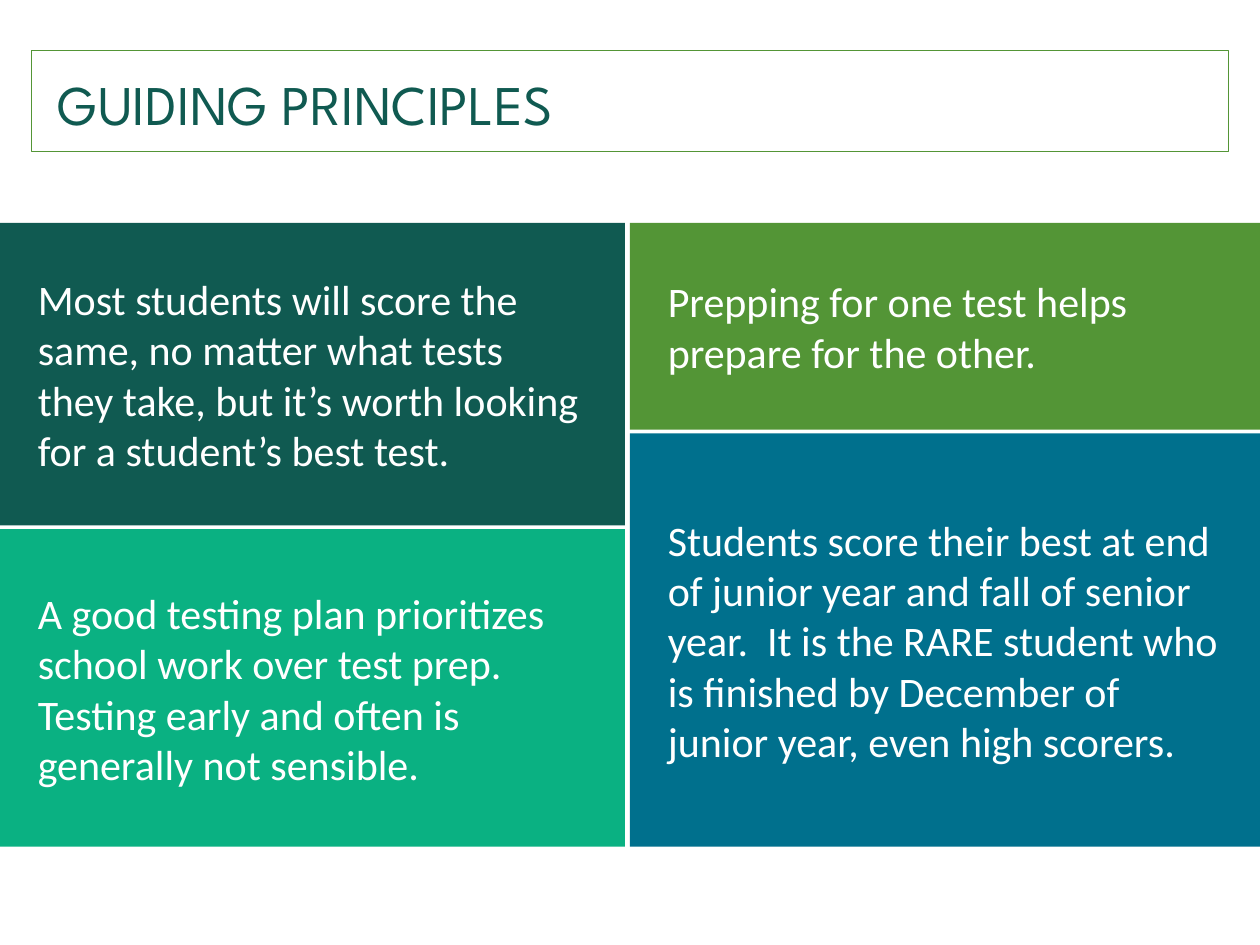
from dataclasses import dataclass

from pptx import Presentation
from pptx import util as u
from pptx.dml.color import RGBColor
from pptx.enum import shapes, text


@dataclass(frozen=True)
class Theme:
    """Colours, fonts and type sizes of the deck."""
    dark: str = "105A51"
    mint: str = "0AB182"
    leaf: str = "539536"
    blue: str = "00708D"
    white: str = "FFFFFF"
    title_font: str = "League Spartan"
    body_font: str = "Calibri"
    title_size: int = 32
    body_size: int = 24


T = Theme()
WIDTH, HEIGHT = 10, 7.5
COL_GAP, ROW_GAP = 0.04, 0.03
TITLE_BOX = (0.25, 0.4, WIDTH - 0.5, 0.8)
BODY_BOX = (0, 1.77, WIDTH, 4.95)

COLUMNS = [
    [
        (20, T.dark, "Most students will score the same, no matter what tests they take, "
                     "but it’s worth looking for a student’s best test."),
        (21, T.mint, "A good testing plan prioritizes school work over test prep.  "
                     "Testing early and often is generally not sensible."),
    ],
    [
        (1, T.leaf, "Prepping for one test helps prepare for the other."),
        (2, T.blue, "Students score their best at end of junior year and fall of senior year.  "
                    "It is the RARE student who is finished by December of junior year, "
                    "even high scorers."),
    ],
]


def inches(box):
    """Convert a box of numbers to lengths."""
    return [u.Inches(v) for v in box]


def write(tf, words, font, size, color, inset):
    """Fill a text frame with one left-aligned, vertically centred paragraph."""
    tf.word_wrap = True
    tf.auto_size = text.MSO_AUTO_SIZE.NONE
    tf.vertical_anchor = text.MSO_ANCHOR.MIDDLE
    tf.margin_left = tf.margin_right = u.Inches(inset)
    p = tf.paragraphs[0]
    p.text = words
    p.alignment = text.PP_ALIGN.LEFT
    p.font.name, p.font.size = font, u.Pt(size)
    p.font.color.rgb = RGBColor.from_string(color)


def add_title(s, box, words):
    """Place the title inside a thin frame."""
    x, y, w, h = box
    sp = s.shapes.title
    sp.left, sp.top, sp.width, sp.height = inches((x, y + 0.1, w, h - 0.16))
    write(sp.text_frame, words, T.title_font, T.title_size, T.dark, 0.21)
    frame = s.shapes.add_shape(shapes.MSO_SHAPE.RECTANGLE, *inches(box))
    frame.shadow.inherit = False
    frame.fill.background()
    frame.line.color.rgb = RGBColor.from_string(T.leaf)
    frame.line.width = u.Pt(0.5)


def add_panel(s, box, color, words):
    """Place one coloured panel with its statement."""
    sp = s.shapes.add_shape(shapes.MSO_SHAPE.ROUNDED_RECTANGLE, *inches(box))
    sp.adjustments[0] = 0
    sp.shadow.inherit = False
    sp.fill.solid()
    sp.fill.fore_color.rgb = RGBColor.from_string(color)
    sp.line.fill.background()
    write(sp.text_frame, words, T.body_font, T.body_size, T.white, 0.3)


def add_column(s, box, panels):
    """Stack panels in a box, sharing its height by weight."""
    x, y, w, h = box
    unit = (h - ROW_GAP * (len(panels) - 1)) / sum(weight for weight, _, _ in panels)
    for weight, color, words in panels:
        add_panel(s, (x, y, w, weight * unit), color, words)
        y += weight * unit + ROW_GAP


def add_mosaic(s, box, columns):
    """Lay out equal columns, with a gap before each next one."""
    x, y, w, h = box
    step = w / len(columns)
    for i, panels in enumerate(columns):
        gap = COL_GAP if i < len(columns) - 1 else 0
        add_column(s, (x + i * step, y, step - gap, h), panels)


def main():
    """Build and save the slide."""
    prs = Presentation()
    prs.slide_width, prs.slide_height = inches((WIDTH, HEIGHT))
    s = prs.slides.add_slide(prs.slide_layouts.get_by_name("Title Only"))
    add_mosaic(s, BODY_BOX, COLUMNS)
    add_title(s, TITLE_BOX, "GUIDING PRINCIPLES")
    prs.save("out.pptx")


if __name__ == "__main__":
    main()
